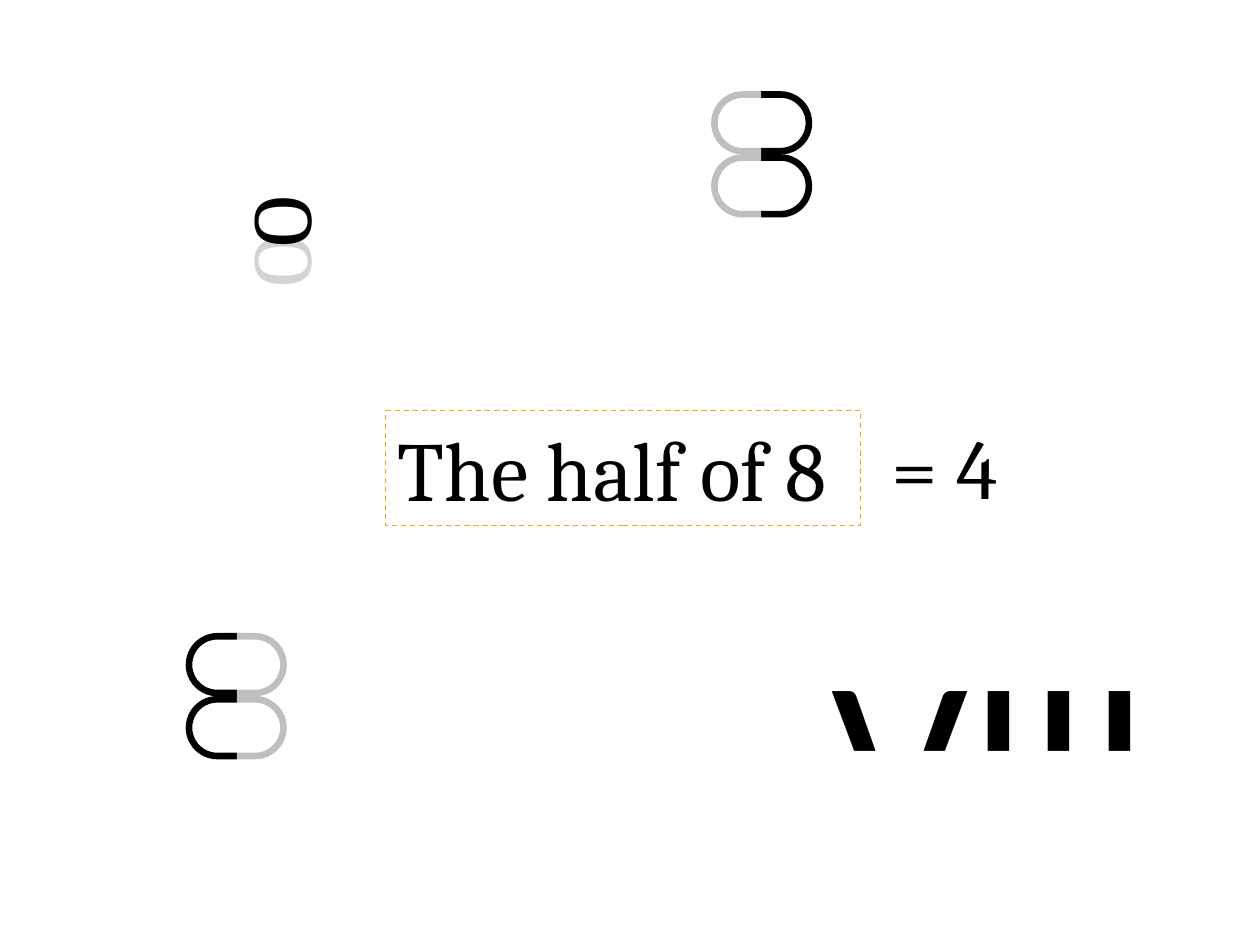
import pptx
import pptx.util
import pptx.dml.color
import pptx.enum.dml
import pptx.enum.shapes
import pptx.enum.text
import lxml.etree

WIDE, HIGH = 10, 7.5
INK, WHITE, GOLD, PALE = "000000", "FFFFFF", "F0AD00", "D4D4D6"
KINDS = pptx.enum.shapes.MSO_SHAPE

TITLE = ("The half of 8", (3.06, 3.26, 3.77, 0.91))
ANSWER = (" = 4", (6.83, 3.25, 1.25, 0.91))
RINGS = [(1.64, PALE), (1.33, INK)]
EIGHTS = [
    {"left": 5.67, "top": 0.75, "veil": 5.42},
    {"left": 1.5, "top": 5.05, "veil": 1.88},
]
ROMAN = ("VIII", (6.5, 4.75, 2.76, 2.42))
COVER = (6.5, 5.96, 3.25, 0.95)
LOOP_W, LOOP_H, STEP = 0.75, 0.45, 0.5
VEIL_W, VEIL_H, RISE = 0.62, 1.17, 0.1


def color(code):
    return pptx.dml.color.RGBColor.from_string(code)


def inches(box):
    return [pptx.util.Inches(n) for n in box]


def write(shape, text, size=48, font="Cambria", ink=INK):
    frame = shape.text_frame
    frame.text = text
    frame.word_wrap = False
    frame.auto_size = pptx.enum.text.MSO_AUTO_SIZE.SHAPE_TO_FIT_TEXT
    line = frame.paragraphs[0]
    line.alignment = pptx.enum.text.PP_ALIGN.LEFT
    for run in line.runs:
        run.font.size = pptx.util.Pt(size)
        run.font.name = font
        run.font.color.rgb = color(ink)


def label(shapes, text, box, **style):
    shape = shapes.add_textbox(*inches(box))
    write(shape, text, **style)
    return shape


def block(shapes, box, kind=KINDS.RECTANGLE, fill=WHITE, line=None, width=0.75):
    shape = shapes.add_shape(kind, *inches(box))
    shape.shadow.inherit = False
    if fill:
        shape.fill.solid()
        shape.fill.fore_color.rgb = color(fill)
    else:
        shape.fill.background()
    if line:
        shape.line.color.rgb = color(line)
        shape.line.width = pptx.util.Pt(width)
    else:
        shape.line.fill.background()
    return shape


def fade(shape, share):
    tag = pptx.oxml.ns.qn("a:srgbClr")
    tint = shape.fill._xPr.find(".//" + tag)
    lxml.etree.SubElement(tint, pptx.oxml.ns.qn("a:alpha"), val=str(share * 1000))


def eight(shapes, left, top, veil):
    for row in range(2):
        box = (left, top + row * STEP, LOOP_W, LOOP_H)
        loop = block(shapes, box, KINDS.ROUNDED_RECTANGLE, line=INK, width=3.78)
        loop.adjustments[0] = 0.5
    fade(block(shapes, (veil, top - RISE, VEIL_W, VEIL_H)), 75)


def main():
    deck = pptx.Presentation()
    deck.slide_width, deck.slide_height = inches((WIDE, HIGH))
    shapes = deck.slides.add_slide(deck.slide_layouts[6]).shapes

    text, box = TITLE
    frame = block(shapes, box, fill=None, line=GOLD)
    frame.line.dash_style = pptx.enum.dml.MSO_LINE.DASH
    write(frame, text)

    pair = shapes.add_group_shape().shapes
    for top, ink in RINGS:
        label(pair, "O", (1.97, top, 0.64, 0.91), ink=ink).rotation = 90

    for spot in EIGHTS:
        eight(shapes.add_group_shape().shapes, **spot)

    label(shapes, *ANSWER)
    half = shapes.add_group_shape().shapes
    label(half, *ROMAN, size=138, font="Calibri")
    block(half, COVER)
    deck.save("out.pptx")


if __name__ == "__main__":
    main()
